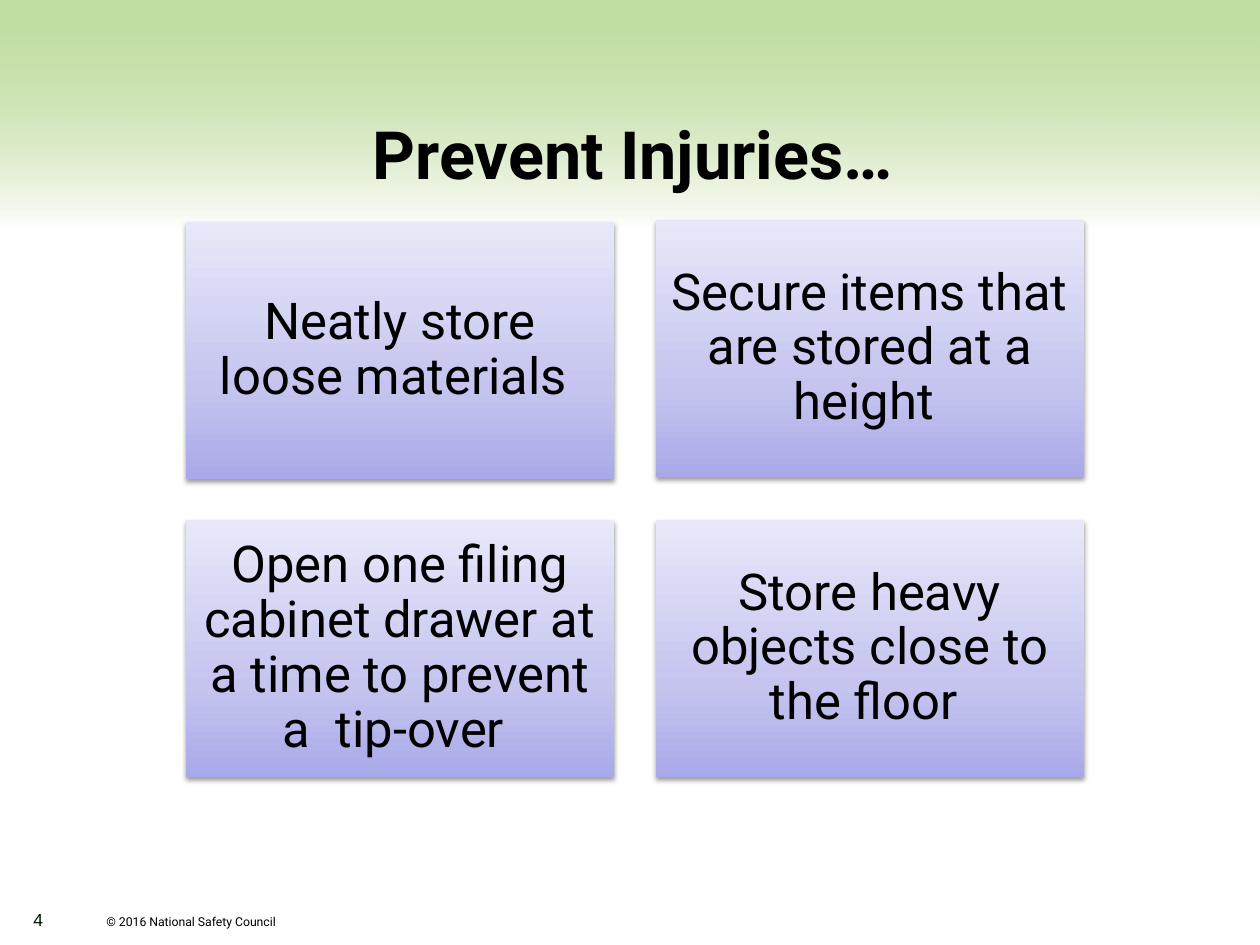
from dataclasses import dataclass

from lxml.etree import SubElement
from pptx import Presentation
from pptx.dml.color import RGBColor
from pptx.enum.shapes import MSO_SHAPE
from pptx.enum.text import MSO_ANCHOR, PP_ALIGN
from pptx.oxml.ns import qn
from pptx.shapes.autoshape import Shape
from pptx.slide import Slide
from pptx.util import Pt

SCALE = 914400 / 126
BLACK = RGBColor(0x00, 0x00, 0x00)
INK = RGBColor(0x00, 0x14, 0x00)
WHITE = RGBColor(0xFF, 0xFF, 0xFF)
GREEN = RGBColor(0x8C, 0xC0, 0x50)
DEEP = RGBColor(0xA9, 0xA9, 0xE9)
MID = RGBColor(0xC4, 0xC4, 0xEF)
PALE = RGBColor(0xE8, 0xE8, 0xFA)

CARD_W, CARD_H = 428, 257
LEFT, RIGHT = 186, 656
LOW = 520


@dataclass
class Stop:
    place: int
    color: RGBColor
    alpha: int = 100


@dataclass
class Card:
    left: int
    top: int
    text: str


BAND = [Stop(0, GREEN, 53), Stop(100, WHITE)]
SHADE = [Stop(0, DEEP), Stop(35, MID), Stop(100, PALE)]
CARDS = [
    Card(LEFT, 222, "Neatly store loose materials "),
    Card(RIGHT, 220, "Secure items that are stored at a height "),
    Card(LEFT, LOW, "Open one filing cabinet drawer at a time to prevent a  tip-over "),
    Card(RIGHT, LOW, "Store heavy objects close to the floor "),
]


def px(count: int) -> int:
    return round(count * SCALE)


def add_color(parent, color: RGBColor, alpha: int) -> None:
    """Append a colour with its opacity in percent."""
    node = SubElement(parent, qn("a:srgbClr"), val=str(color))
    if alpha < 100:
        SubElement(node, qn("a:alpha"), val=str(alpha * 1000))


def add_rect(slide: Slide, left: int, top: int, width: int, height: int,
             stops: list[Stop], angle: int) -> Shape:
    """Add a borderless gradient box; the angle runs anticlockwise."""
    rect = slide.shapes.add_shape(
        MSO_SHAPE.RECTANGLE, px(left), px(top), px(width), px(height))
    rect.shadow.inherit = False
    rect.line.fill.background()
    rect.fill.gradient()
    rect.fill.gradient_angle = angle
    ramp = rect._element.spPr.find(qn("a:gradFill")).find(qn("a:gsLst"))
    for old in list(ramp):
        ramp.remove(old)
    for stop in stops:
        node = SubElement(ramp, qn("a:gs"), pos=str(stop.place * 1000))
        add_color(node, stop.color, stop.alpha)
    return rect


def cast_shadow(shape: Shape) -> None:
    effects = shape._element.spPr.find(qn("a:effectLst"))
    node = SubElement(
        effects, qn("a:outerShdw"), blurRad=str(Pt(3.1)), dist=str(Pt(1.6)),
        dir="5400000", rotWithShape="0")
    add_color(node, BLACK, 38)


def set_text(shape: Shape, text: str, *, size: int, font: str = "Roboto",
             color: RGBColor = BLACK, bold: bool = False,
             align: PP_ALIGN = PP_ALIGN.LEFT,
             anchor: MSO_ANCHOR = MSO_ANCHOR.TOP,
             inset: int | None = None, pitch: float = 1.0) -> None:
    frame = shape.text_frame
    frame.word_wrap = True
    frame.vertical_anchor = anchor
    if inset is not None:
        frame.margin_left = frame.margin_right = px(inset)
        frame.margin_top = frame.margin_bottom = px(inset)
    para = frame.paragraphs[0]
    para.alignment = align
    para.line_spacing = pitch
    run = para.add_run()
    run.text = text
    run.font.size = Pt(size)
    run.font.name = font
    run.font.bold = bold
    run.font.color.rgb = color


def add_box(slide: Slide, left: int, top: int, width: int, height: int) -> Shape:
    return slide.shapes.add_textbox(px(left), px(top), px(width), px(height))


def add_card(slide: Slide, card: Card) -> None:
    rect = add_rect(slide, card.left, card.top, CARD_W, CARD_H, SHADE, 90)
    cast_shadow(rect)
    set_text(rect, card.text, size=29, align=PP_ALIGN.CENTER,
             anchor=MSO_ANCHOR.MIDDLE, inset=15, pitch=0.9)


def main() -> None:
    deck = Presentation()
    deck.slide_width, deck.slide_height = px(1260), px(945)
    slide = deck.slides.add_slide(deck.slide_layouts[6])

    add_rect(slide, 0, 0, 1260, 231, BAND, 270)
    set_text(add_box(slide, 94, 908, 399, 32),
             "© 2016 National Safety Council", size=7)
    set_text(add_box(slide, 21, 903, 63, 55), "4",
             size=10, font="Arial", color=INK)
    set_text(add_box(slide, 69, 105, 1128, 95), "Prevent Injuries…",
             size=38, bold=True, align=PP_ALIGN.CENTER,
             anchor=MSO_ANCHOR.MIDDLE)
    for card in CARDS:
        add_card(slide, card)

    deck.save("out.pptx")


if __name__ == "__main__":
    main()
